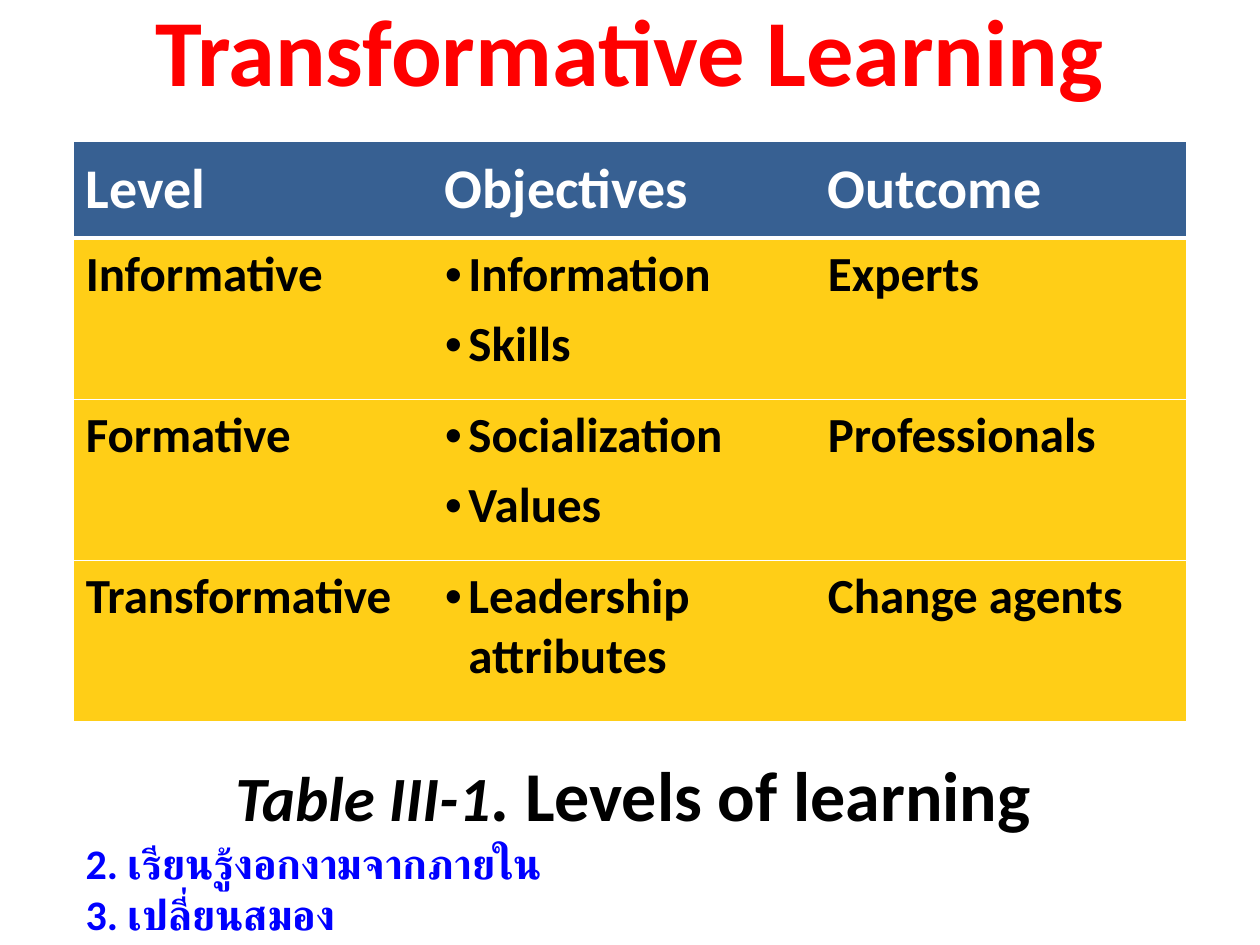
from dataclasses import dataclass

from lxml import etree
from pptx import Presentation
from pptx.dml.color import RGBColor
from pptx.enum.text import MSO_ANCHOR, PP_ALIGN
from pptx.oxml.ns import qn
from pptx.util import Pt

LEFT, CENTER = PP_ALIGN.LEFT, PP_ALIGN.CENTER
TOP, MIDDLE = MSO_ANCHOR.TOP, MSO_ANCHOR.MIDDLE
FONT = "Calibri"
WHITE, BLACK, RED, BLUE = "FFFFFF", "000000", "FF0000", "0000FF"
HEADER_FILL, BODY_FILL = "376092", "FFCE17"
COLUMN_WIDTHS = (205.2, 218.9, 212.4)
ROW_HEIGHTS = (55.2, 92.1, 92.1, 92.1)
BULLET_INDENT = 13.5
OBJECTIVES_COLUMN = 1


@dataclass
class Span:
    text: str
    size: float
    color: str = BLACK
    italic: bool = False


@dataclass
class Label:
    left: float
    top: float
    width: float
    height: float
    lines: list[list[Span]]
    align: PP_ALIGN = CENTER
    anchor: MSO_ANCHOR = TOP
    wrap: bool = False


HEADINGS = ("Level", "Objectives", "Outcome")
LEVELS = (
    ("Informative", "Information\nSkills", "Experts"),
    ("Formative", "Socialization\nValues", "Professionals"),
    ("Transformative", "Leadership attributes", "Change agents"),
)
LABELS = (
    Label(75.6, 419, 572.4, 69.1,
          [[Span("Table III-1", 36, italic=True), Span(". Levels of learning", 40)]],
          anchor=MIDDLE, wrap=True),
    Label(75.6, -7.9, 568.1, 72.7, [[Span("Transformative Learning", 54, RED)]]),
    Label(41.8, 475.2, 286.6, 65.5,
          [[Span("2. เรียนรู้งอกงามจากภายใน", 24, BLUE)],
           [Span("3. เปลี่ยนสมอง", 24, BLUE)]], align=LEFT),
)


def rgb(value: str) -> RGBColor:
    return RGBColor.from_string(value)


def style_font(font, size: float, color: str, italic: bool = False) -> None:
    font.name = FONT
    font.size = Pt(size)
    font.bold = True
    font.italic = italic
    font.color.rgb = rgb(color)


def add_label(page, label: Label) -> None:
    box = page.shapes.add_textbox(
        Pt(label.left), Pt(label.top), Pt(label.width), Pt(label.height))
    frame = box.text_frame
    frame.word_wrap = label.wrap
    frame.vertical_anchor = label.anchor
    for index, line in enumerate(label.lines):
        paragraph = frame.add_paragraph() if index else frame.paragraphs[0]
        paragraph.alignment = label.align
        for span in line:
            run = paragraph.add_run()
            run.text = span.text
            style_font(run.font, span.size, span.color, span.italic)


def set_borders(cell, widths: dict[str, float]) -> None:
    """Draw white cell edges; a width of zero hides the edge."""
    properties = cell._tc.get_or_add_tcPr()
    for position, (edge, width) in enumerate(widths.items()):
        line = etree.Element(qn(f"a:ln{edge}"), w=str(Pt(width)))
        properties.insert(position, line)
        if width:
            fill = etree.SubElement(line, qn("a:solidFill"))
            etree.SubElement(fill, qn("a:srgbClr"), val=WHITE)
        else:
            etree.SubElement(line, qn("a:noFill"))


def add_bullet(paragraph) -> None:
    properties = paragraph._p.get_or_add_pPr()
    properties.set("marL", str(Pt(BULLET_INDENT)))
    properties.set("indent", str(-Pt(BULLET_INDENT)))
    etree.SubElement(properties, qn("a:buFont"), typeface="Arial")
    etree.SubElement(properties, qn("a:buChar"), char="•")


def fill_cell(cell, text: str, row: int, column: int) -> None:
    is_header = row == 0
    cell.fill.solid()
    cell.fill.fore_color.rgb = rgb(HEADER_FILL if is_header else BODY_FILL)
    cell.vertical_anchor = MIDDLE if is_header else TOP
    cell.text_frame.text = text
    for paragraph in cell.text_frame.paragraphs:
        if not is_header:
            paragraph.space_before = Pt(6)
            if column == OBJECTIVES_COLUMN:
                add_bullet(paragraph)
        for run in paragraph.runs:
            style_font(run.font, 32 if is_header else 28, WHITE if is_header else BLACK)
    set_borders(cell, {
        "L": 1 if column == 0 else 0,
        "R": 1 if column == len(HEADINGS) - 1 else 0,
        "T": 3 if row == 1 else 1,
        "B": 3 if is_header else 1,
    })


def add_levels_table(page) -> None:
    rows = (HEADINGS, *LEVELS)
    table = page.shapes.add_table(
        len(rows), len(HEADINGS), Pt(41.8), Pt(80.9),
        Pt(sum(COLUMN_WIDTHS)), Pt(sum(ROW_HEIGHTS))).table
    for column, width in zip(table.columns, COLUMN_WIDTHS):
        column.width = Pt(width)
    for row, height in zip(table.rows, ROW_HEIGHTS):
        row.height = Pt(height)
    for row_index, texts in enumerate(rows):
        for column_index, text in enumerate(texts):
            fill_cell(table.cell(row_index, column_index), text, row_index, column_index)


def main() -> None:
    deck = Presentation()
    deck.slide_width, deck.slide_height = Pt(720), Pt(540)
    page = deck.slides.add_slide(deck.slide_layouts[6])
    add_levels_table(page)
    for label in LABELS:
        add_label(page, label)
    deck.save("out.pptx")


if __name__ == "__main__":
    main()
